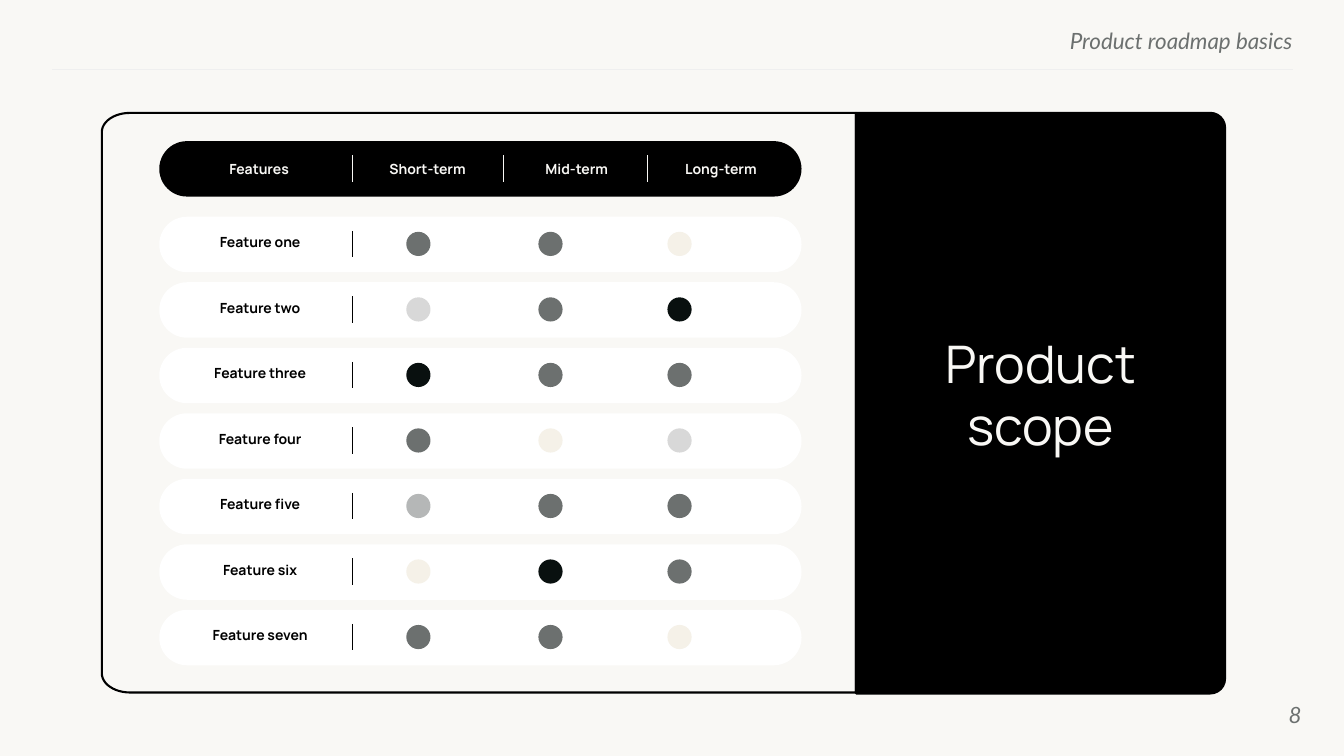
from math import cos, pi, sin

from lxml import etree
from pptx import Presentation
from pptx.dml.color import RGBColor
from pptx.enum.shapes import MSO_CONNECTOR, MSO_SHAPE
from pptx.enum.text import MSO_ANCHOR, PP_ALIGN
from pptx.oxml.ns import qn
from pptx.util import Inches, Pt

PILL = MSO_SHAPE.ROUNDED_RECTANGLE
PANEL = MSO_SHAPE.ROUND_2_SAME_RECTANGLE
DOT = MSO_SHAPE.OVAL
LINE = MSO_CONNECTOR.STRAIGHT
TOP, MIDDLE = MSO_ANCHOR.TOP, MSO_ANCHOR.MIDDLE
CENTER, RIGHT = PP_ALIGN.CENTER, PP_ALIGN.RIGHT

COLORS = {
    "paper": "F9F8F5", "black": "000000", "white": "FFFFFF", "rule": "EFEFEF",
    "ink": "09100F", "gray": "6C706F", "mid": "B5B7B7", "pale": "D8D8D8",
    "cream": "F5F1E8",
}
HEADS = [("Features", 2.57), ("Short-term", 4.24), ("Mid-term", 5.72), ("Long-term", 7.15)]
SPLITS = [3.5, 4.99, 6.42]
DOTS_X = [4.03, 5.34, 6.62]
ROWS = [
    ("Feature one", "gray", "gray", "cream"),
    ("Feature two", "pale", "gray", "ink"),
    ("Feature three", "ink", "gray", "gray"),
    ("Feature four", "gray", "cream", "pale"),
    ("Feature five", "mid", "gray", "gray"),
    ("Feature six", "cream", "ink", "gray"),
    ("Feature seven", "gray", "gray", "cream"),
]
ROW_TOP, PITCH = 2.15, 0.65


def tint(name):
    return RGBColor.from_string(COLORS[name])


class Board:
    """Holds the style and the current slide."""

    def __init__(self, slide):
        self.slide = slide
        self.font = "Manrope"
        fill = slide.background.fill
        fill.solid()
        fill.fore_color.rgb = tint("paper")

    def paint(self, shape, fill=None, edge=None):
        shape.shadow.inherit = False
        if fill:
            shape.fill.solid()
            shape.fill.fore_color.rgb = tint(fill)
        else:
            shape.fill.background()
        if edge:
            shape.line.color.rgb = tint(edge)
            shape.line.width = Pt(1.5)
        else:
            shape.line.fill.background()

    def shape(self, kind, x, y, w, h, fill, edge=None):
        item = self.slide.shapes.add_shape(kind, Inches(x), Inches(y), Inches(w), Inches(h))
        self.paint(item, fill, edge)
        return item

    def pill(self, y, fill):
        self.shape(PILL, 1.58, y, 6.37, 0.55, fill).adjustments[0] = 0.5

    def line(self, x1, y1, x2, y2, color):
        item = self.slide.shapes.add_connector(
            LINE, Inches(x1), Inches(y1), Inches(x2), Inches(y2))
        item.line.color.rgb = tint(color)
        item.line.width = Pt(0.75)
        etree.SubElement(item._element.spPr, qn("a:effectLst"))

    def text(self, words, x, y, w, h, color, size=10, bold=False, italic=False,
             font=None, align=CENTER, anchor=TOP, pad=(0, 0)):
        frame = self.slide.shapes.add_textbox(
            Inches(x), Inches(y), Inches(w), Inches(h)).text_frame
        frame.word_wrap = True
        frame.vertical_anchor = anchor
        frame.margin_left = frame.margin_right = Inches(pad[0])
        frame.margin_top = frame.margin_bottom = Inches(pad[1])
        para = frame.paragraphs[0]
        para.alignment = align
        run = para.add_run()
        run.text = words
        run.font.name = font or self.font
        run.font.size = Pt(size)
        run.font.bold = bold
        run.font.italic = italic
        run.font.color.rgb = tint(color)

    def frame(self, left, top, right, low, rx, ry, steps=12):
        """Outline a box whose two left corners are elliptic arcs."""
        turns = [pi / 2 * i / steps for i in range(steps + 1)]
        arc = [(left + rx * (1 - sin(t)), ry * (1 - cos(t))) for t in turns]
        points = [(right, low)]
        points += [(x, low - d) for x, d in arc]
        points += [(x, top + d) for x, d in reversed(arc)]
        pen = self.slide.shapes.build_freeform(Inches(right), Inches(top))
        pen.add_line_segments([(Inches(x), Inches(y)) for x, y in points], close=True)
        self.paint(pen.convert_to_shape(), edge="black")


def main():
    deck = Presentation()
    deck.slide_width, deck.slide_height = Inches(13.33), Inches(7.5)
    board = Board(deck.slides.add_slide(deck.slide_layouts[6]))

    note = dict(color="gray", size=16, italic=True, font="Lato", align=RIGHT)
    board.text("Product roadmap basics", 7.68, 0.27, 5.14, 0.24, **note)
    board.line(0.52, 0.69, 12.82, 0.69, "rule")

    board.frame(1.01, 1.12, 8.49, 6.87, 0.28, 0.19)
    panel = board.shape(PANEL, 7.44, 2.17, 5.76, 3.66, "black", "black")
    panel.adjustments[0], panel.adjustments[1] = 0.04, 0
    panel.rotation = 90
    board.text("Product scope", 8.81, 3.24, 3.02, 1.35, "paper", 37, pad=(0.1, 0.05))

    board.pill(1.4, "black")
    for x in SPLITS:
        board.line(x, 1.54, x, 1.81, "paper")
    for words, mid in HEADS:
        board.text(words, mid - 0.6, 1.59, 1.2, 0.17, "paper", bold=True, anchor=MIDDLE)

    for i, (label, *marks) in enumerate(ROWS):
        y = ROW_TOP + i * PITCH
        board.pill(y, "white")
        board.text(label, 1.88, y + 0.17, 1.4, 0.17, "black", bold=True)
        board.line(3.5, y + 0.14, 3.5, y + 0.4, "black")
        for x, mark in zip(DOTS_X, marks):
            board.shape(DOT, x, y + 0.15, 0.24, 0.24, mark)

    board.text("8", 12.11, 6.8, 0.8, 0.57, anchor=MIDDLE, **note)
    deck.save("out.pptx")


if __name__ == "__main__":
    main()
